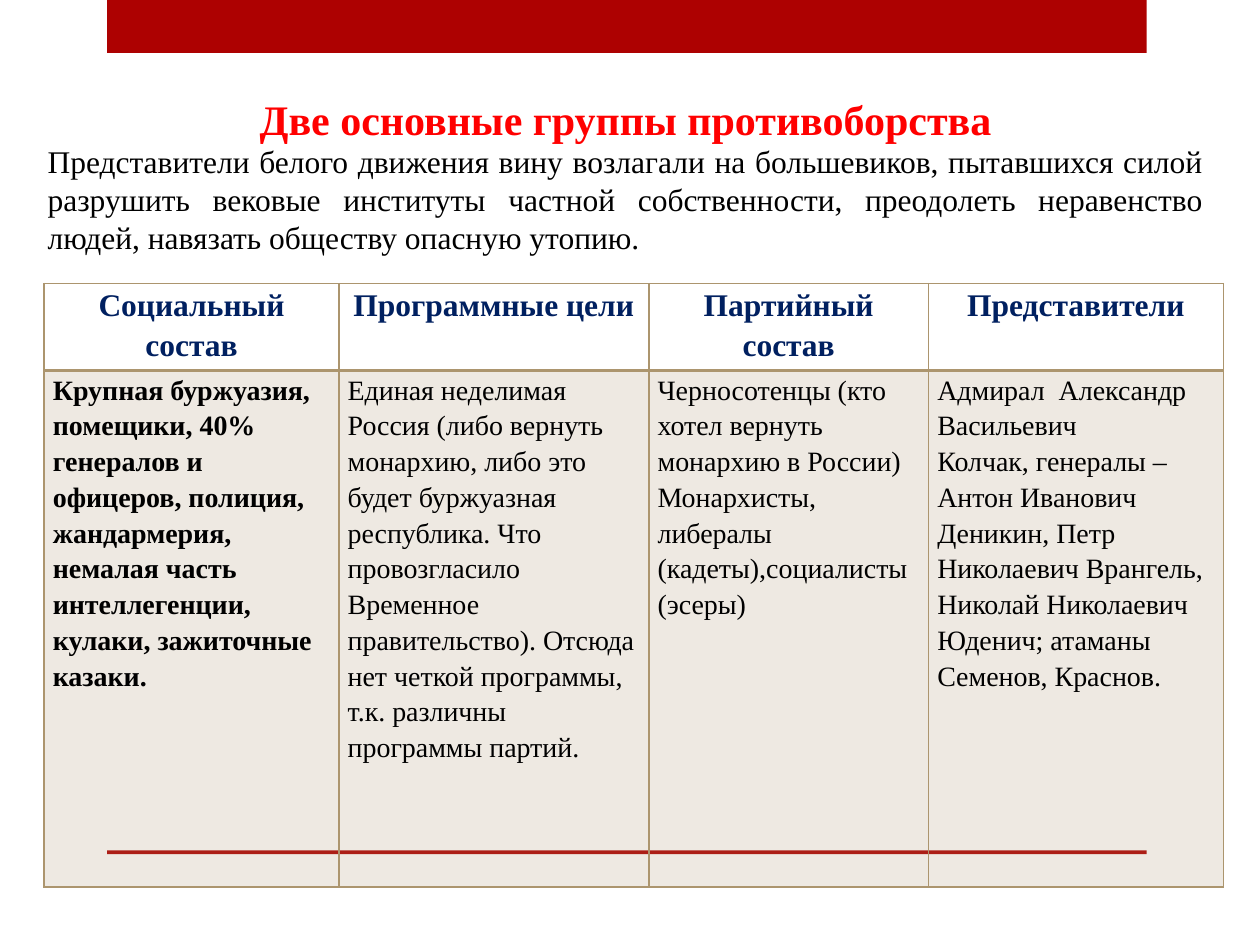
"""Build a slide on the two opposing groups: a heading, an intro and a table."""
from lxml import etree
from pptx import Presentation
from pptx import util as u
from pptx.dml.color import RGBColor
from pptx.enum import shapes, text
from pptx.oxml.ns import qn

TITLE = "Две основные группы противоборства"
INTRO = ("Представители белого движения вину возлагали на большевиков, "
         "пытавшихся силой разрушить вековые институты частной собственности, "
         "преодолеть неравенство людей, навязать обществу опасную утопию.")
COLS = [
    (2.34, "Социальный состав",
     ["Крупная буржуазия, помещики, 40% генералов и офицеров, полиция, "
      "жандармерия, немалая часть интеллегенции, кулаки, зажиточные казаки."]),
    (2.46, "Программные цели",
     ["Единая неделимая Россия (либо вернуть монархию, либо это будет "
      "буржуазная республика. Что провозгласило Временное правительство). "
      "Отсюда нет четкой программы, т.к. различны программы партий."]),
    (2.22, "Партийный состав",
     ["Черносотенцы (кто хотел вернуть монархию в России)",
      "Монархисты, либералы (кадеты),социалисты (эсеры)"]),
    (2.34, "Представители",
     ["Адмирал  Александр Васильевич",
      "Колчак, генералы –Антон Иванович Деникин, Петр Николаевич Врангель, "
      "Николай Николаевич Юденич; атаманы Семенов, Краснов."]),
]
ROWS = (0.69, 4.1)
BARS = [(0, 0.42), (6.75, 0.03)]
RED, TAN = "AD0101", "AC956E"
ALIGN = text.PP_ALIGN
HEAD = dict(size=24, bold=True, hue="FF0000", align=ALIGN.CENTER, gap=1)
LEAD = dict(size=18, bold=False, hue="000000", align=ALIGN.JUSTIFY, gap=1)
TOP = dict(size=18, bold=True, hue="002060", align=ALIGN.CENTER, gap=1.15)
CELL = dict(size=16, bold=False, hue="000000", align=ALIGN.LEFT, gap=1.15)


def tint(form, hue):
    """Give a fill or a font colour a hex value."""
    form.rgb = RGBColor.from_string(hue)


def write(frame, lines, look):
    """Write paragraphs in one look."""
    frame.word_wrap = True
    for i, line in enumerate(lines):
        para = frame.add_paragraph() if i else frame.paragraphs[0]
        para.alignment, para.line_spacing = look["align"], look["gap"]
        para.space_before = u.Pt(0)
        run = para.add_run()
        run.text = line
        form = dict(name="Times New Roman", size=u.Pt(look["size"]), bold=look["bold"])
        for key, val in form.items():
            setattr(run.font, key, val)
        tint(run.font.color, look["hue"])


def place(shape, left, top, wide, high):
    """Place a text shape and set its margins."""
    for key, val in dict(left=left, top=top, width=wide, height=high).items():
        setattr(shape, key, u.Inches(val))
    frame = shape.text_frame
    frame.auto_size = text.MSO_AUTO_SIZE.NONE
    frame.vertical_anchor = text.MSO_ANCHOR.TOP
    frame.margin_top = frame.margin_bottom = 0
    frame.margin_left = frame.margin_right = u.Inches(0.1)
    return frame


def edge(cell, base):
    """Draw the four borders of a cell."""
    props = cell._tc.get_or_add_tcPr()
    for tag, wide in dict(lnL=1, lnR=1, lnT=1, lnB=base).items():
        line = etree.SubElement(props, qn("a:" + tag), w=str(u.Pt(wide)))
        fill = etree.SubElement(line, qn("a:solidFill"))
        etree.SubElement(fill, qn("a:srgbClr"), val=TAN)


def shade(cell):
    """Fill a cell with a see-through tan."""
    cell.fill.solid()
    tint(cell.fill.fore_color, TAN)
    hue = cell._tc.tcPr.find(".//" + qn("a:solidFill") + "[last()]")
    hue = cell._tc.tcPr.findall(qn("a:solidFill"))[0][0]
    etree.SubElement(hue, qn("a:alpha"), val="20000")


deck = Presentation()
deck.slide_width, deck.slide_height = u.Inches(10), u.Inches(7.5)
slide = deck.slides.add_slide(deck.slide_layouts[5])

for top, high in BARS:
    bar = slide.shapes.add_shape(shapes.MSO_SHAPE.RECTANGLE, u.Inches(0.85),
                                 u.Inches(top), u.Inches(8.25), u.Inches(high))
    bar.shadow.inherit = False
    bar.fill.solid()
    tint(bar.fill.fore_color, RED)
    bar.line.fill.background()

grid = slide.shapes.add_table(
    len(ROWS), len(COLS), u.Inches(0.35), u.Inches(2.25),
    u.Inches(sum(c[0] for c in COLS)), u.Inches(sum(ROWS))).table
grid.first_row = grid.horz_banding = False
for row, high in zip(grid.rows, ROWS):
    row.height = u.Inches(high)
for x, (wide, head, body) in enumerate(COLS):
    grid.columns[x].width = u.Inches(wide)
    for y, lines in enumerate(([head], body)):
        cell = grid.cell(y, x)
        cell.margin_left = cell.margin_right = u.Inches(0.07)
        cell.margin_top = cell.margin_bottom = 0
        look = dict(CELL, bold=x == 0) if y else TOP
        write(cell.text_frame, lines, look)
        edge(cell, 1 if y else 2)
        if y:
            shade(cell)
        else:
            cell.fill.background()

write(place(slide.shapes.title, 0.28, 0.74, 9.37, 0.39), [TITLE], HEAD)
box = slide.shapes.add_textbox(0, 0, 0, 0)
write(place(box, 0.28, 1.13, 9.37, 0.92), [INTRO], LEAD)

deck.save("out.pptx")
